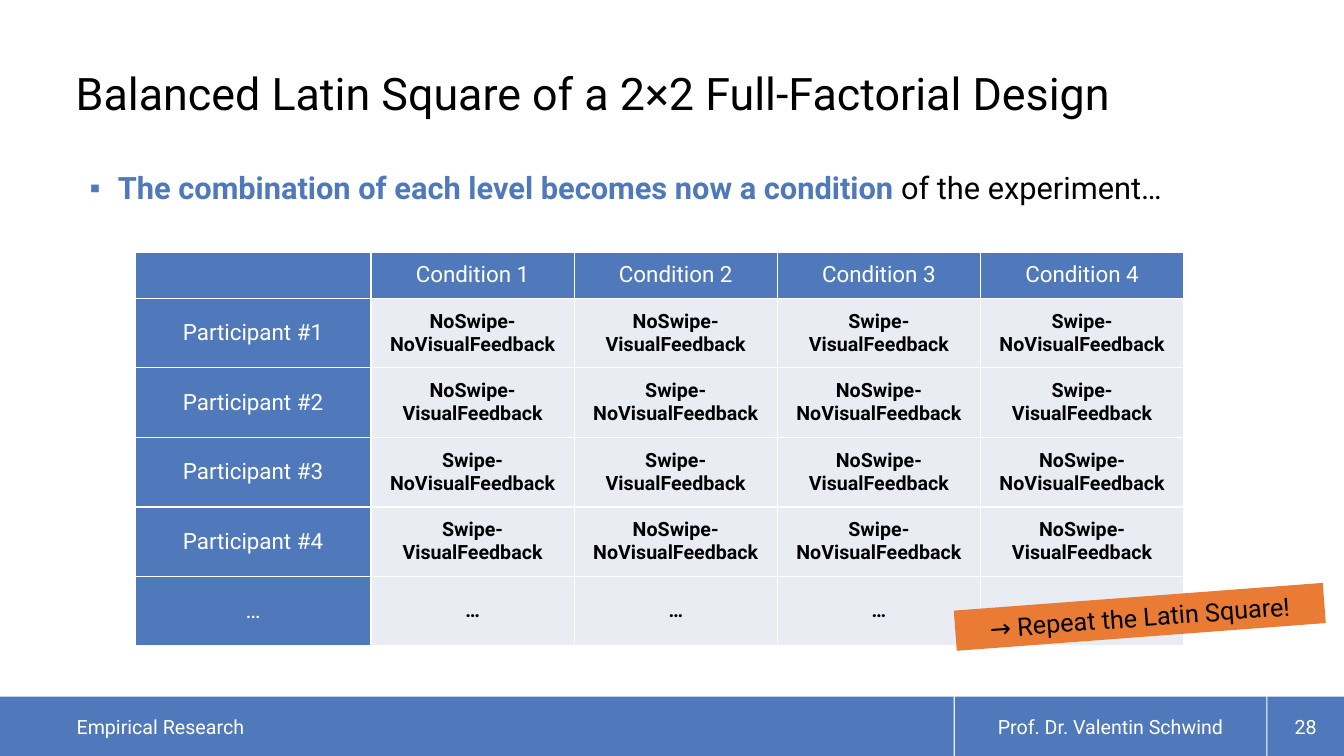
import pptx
import pptx.dml.color
import pptx.enum.shapes
import pptx.enum.text
import pptx.oxml
import pptx.oxml.ns
import pptx.util

Inches = pptx.util.Inches
Pt = pptx.util.Pt
ALIGN = pptx.enum.text.PP_ALIGN
ANCHOR = pptx.enum.text.MSO_ANCHOR
BLUE, ORANGE, PALE, WHITE, BLACK = "5079BC", "EA7B34", "E9ECF3", "FFFFFF", "000000"

CONDITIONS = [
    ["NoSwipe-NoVisualFeedback", "NoSwipe-VisualFeedback", "Swipe-VisualFeedback", "Swipe-NoVisualFeedback"],
    ["NoSwipe-VisualFeedback", "Swipe-NoVisualFeedback", "NoSwipe-NoVisualFeedback", "Swipe-\nVisualFeedback"],
    ["Swipe-NoVisualFeedback", "Swipe-\nVisualFeedback", "NoSwipe-VisualFeedback", "NoSwipe-NoVisualFeedback"],
    ["Swipe-\nVisualFeedback", "NoSwipe-NoVisualFeedback", "Swipe-NoVisualFeedback", "NoSwipe-VisualFeedback"],
    ["…", "…", "…", "...…"],
]


def color(value):
    return pptx.dml.color.RGBColor.from_string(value)


def paint(target, value):
    target.fill.solid()
    target.fill.fore_color.rgb = color(value)


def add_xml(parent, markup):
    namespace = pptx.oxml.ns.nsdecls("a")
    parent.append(pptx.oxml.parse_xml(markup.replace("/>", f" {namespace}/>", 1)
                                      if markup.endswith("/>") and markup.count("<") == 1
                                      else markup.replace(">", f" {namespace}>", 1)))


def place(shape, left, top, width, height):
    shape.left, shape.top = Inches(left), Inches(top)
    shape.width, shape.height = Inches(width), Inches(height)


def set_frame(frame, anchor, insets=(0, 0, 0, 0)):
    frame.word_wrap = True
    frame.auto_size = pptx.enum.text.MSO_AUTO_SIZE.NONE
    frame.vertical_anchor = anchor
    (frame.margin_left, frame.margin_top,
     frame.margin_right, frame.margin_bottom) = map(Inches, insets)


def write(para, text, size, value, bold=False, align=ALIGN.LEFT):
    para.alignment = align
    for number, line in enumerate(text.split("\n")):
        if number:
            para.add_line_break()
        span = para.add_run()
        span.text = line
        span.font.name = "Roboto"
        span.font.size = Pt(size)
        span.font.bold = bold
        span.font.color.rgb = color(value)


def add_rectangle(page, box, value):
    shape = page.shapes.add_shape(
        pptx.enum.shapes.MSO_SHAPE.RECTANGLE, *map(Inches, box))
    shape.shadow.inherit = False
    paint(shape, value)
    shape.line.fill.background()
    return shape


def build_title(page, box):
    title = page.shapes.title
    place(title, *box)
    set_frame(title.text_frame, ANCHOR.BOTTOM)
    para = title.text_frame.paragraphs[0]
    para.line_spacing = 0.9
    write(para, "Balanced Latin Square of a 2×2 Full-Factorial Design", 32, BLACK)


def build_statement(page, box):
    body = page.placeholders[1]
    place(body, *box)
    set_frame(body.text_frame, ANCHOR.TOP, (0.1, 0.05, 0.1, 0.05))
    para = body.text_frame.paragraphs[0]
    para.line_spacing = 1.1
    para.space_before, para.space_after = Pt(0), Pt(4)
    properties = para._p.get_or_add_pPr()
    properties.set("marL", str(Inches(0.31)))
    properties.set("indent", str(Inches(-0.28)))
    add_xml(properties, f'<a:buClr><a:srgbClr val="{BLUE}"/></a:buClr>')
    add_xml(properties, '<a:buChar char="▪"/>')
    write(para, "The combination of each level becomes now a condition ", 22, BLUE, True)
    write(para, "of the experiment…", 22, BLACK)


def build_footer(page, box):
    left, top, width, height = box
    author_left, number_left, gap = left + 9.46, left + 12.57, 0.01
    bars = [(left, author_left),
            (author_left + gap, number_left - gap),
            (number_left, left + width)]
    for start, end in bars:
        bar = add_rectangle(page, (start, top, end - start, height), BLUE)
        page.shapes.title.element.addprevious(bar.element)

    course = page.placeholders[2]
    place(course, left + 0.76, top, 8.7, height)
    set_frame(course.text_frame, ANCHOR.MIDDLE, (0, 0, 0.2, 0))
    para = course.text_frame.paragraphs[0]
    para.space_before = Pt(0)
    properties = para._p.get_or_add_pPr()
    properties.set("marL", "0")
    properties.set("indent", "0")
    add_xml(properties, "<a:buNone/>")
    write(para, "Empirical Research", 14, WHITE)

    for start, end, text in [(author_left, number_left, "Prof. Dr. Valentin Schwind"),
                             (number_left, left + width, "28")]:
        label = page.shapes.add_textbox(*map(Inches, (start, top, end - start, height)))
        set_frame(label.text_frame, ANCHOR.MIDDLE)
        write(label.text_frame.paragraphs[0], text, 14, WHITE, align=ALIGN.CENTER)


def format_cell(cell, text, is_header):
    properties = cell._tc.get_or_add_tcPr()
    for side in ("lnL", "lnR", "lnT", "lnB"):
        add_xml(properties, f'<a:{side} w="{Pt(1)}"><a:solidFill>'
                            f'<a:srgbClr val="{WHITE}"/></a:solidFill></a:{side}>')
    paint(cell, BLUE if is_header else PALE)
    cell.vertical_anchor = ANCHOR.MIDDLE
    if is_header:
        cell.margin_left = cell.margin_right = cell.margin_top = cell.margin_bottom = 0
    if text:
        size, value = (16, WHITE) if is_header else (14, BLACK)
        write(cell.text_frame.paragraphs[0], text, size, value, not is_header, ALIGN.CENTER)


def build_latin_square(page, box):
    left, top, width, height = box
    header_width, header_height = 2.34, 0.46
    names = [f"Participant #{number}" for number in range(1, 5)] + ["…"]
    rows = [[""] + [f"Condition {number}" for number in range(1, 5)]]
    rows += [[name] + conditions for name, conditions in zip(names, CONDITIONS)]
    table = page.shapes.add_table(len(rows), len(rows[0]), *map(Inches, box)).table
    for index, column in enumerate(table.columns):
        column.width = Inches((width - header_width) / 4 if index else header_width)
    for index, row in enumerate(table.rows):
        row.height = Inches((height - header_height) / 5 if index else header_height)
    for row_index, texts in enumerate(rows):
        for column_index, text in enumerate(texts):
            format_cell(table.cell(row_index, column_index), text,
                        row_index == 0 or column_index == 0)


def build_sticker(page, box):
    sticker = add_rectangle(page, box, ORANGE)
    sticker.rotation = 355.7
    set_frame(sticker.text_frame, ANCHOR.MIDDLE, (0.1, 0.05, 0.1, 0.05))
    write(sticker.text_frame.paragraphs[0], "→ Repeat the Latin Square!", 18, BLACK,
          align=ALIGN.CENTER)


def main():
    deck = pptx.Presentation()
    deck.slide_width, deck.slide_height = Inches(13.33), Inches(7.5)
    page = deck.slides.add_slide(deck.slide_layouts[3])
    build_title(page, (0.75, 0.13, 11.81, 1.06))
    build_footer(page, (0, 6.91, 13.33, 0.59))
    build_statement(page, (0.76, 1.59, 11.81, 5.12))
    build_latin_square(page, (1.34, 2.5, 10.4, 3.91))
    build_sticker(page, (9.47, 5.92, 3.67, 0.4))
    deck.save("out.pptx")


if __name__ == "__main__":
    main()
